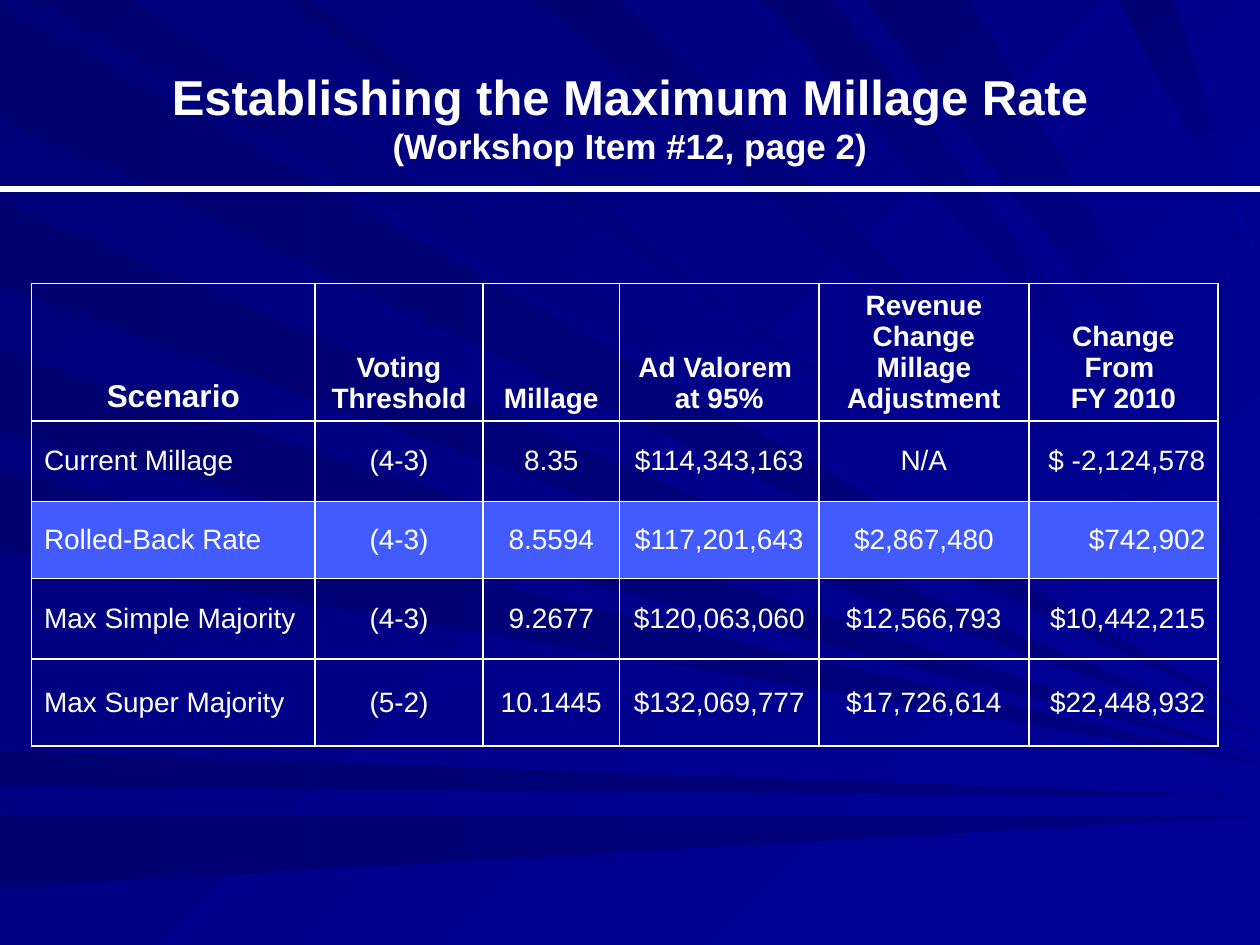
from lxml import etree
from pptx import Presentation
from pptx.dml.color import RGBColor
from pptx.enum.shapes import MSO_CONNECTOR
from pptx.enum.text import MSO_ANCHOR, PP_ALIGN
from pptx.oxml.ns import qn
from pptx.util import Pt

STRAIGHT = MSO_CONNECTOR.STRAIGHT
LEFT, CENTER, RIGHT = PP_ALIGN.LEFT, PP_ALIGN.CENTER, PP_ALIGN.RIGHT
MIDDLE, BOTTOM = MSO_ANCHOR.MIDDLE, MSO_ANCHOR.BOTTOM
FONT = "Arial"
COLORS = {"text": "FFFFFF", "rule": "FFFFFF", "highlight": "425BFF",
          "back_start": "000078", "back_end": "000099",
          "ray_start": "000070", "left_end": "000080", "top_end": "000099"}
PAGE_WIDTH, PAGE_HEIGHT = 720, 540
LEFT_RAYS = [(2, 67, 410), (115, 164, 421), (200, 246, 432),
             (269, 315, 436), (429, 449, 455), (466, 507, 466)]
TOP_RAYS = [(19, 73, 405), (162, 178, 396), (307, 354, 355),
            (436, 476, 321), (494, 554, 294), (639, 670, 151)]
TITLE_LINES = [("Establishing the Maximum Millage Rate", 28),
               ("(Workshop Item #12, page 2)", 20)]
COLUMN_WIDTHS = [162, 96, 78, 114, 120, 108]
ROW_HEIGHTS = [78.5, 46, 44, 46, 50]
ALIGNMENTS = [LEFT, CENTER, CENTER, CENTER, CENTER, RIGHT]
HIGHLIGHT_ROW = 2
ROWS = [
    ["Scenario", "Voting Threshold", "Millage", "Ad Valorem \nat 95%",
     "Revenue Change Millage Adjustment", "Change From \nFY 2010"],
    ["Current Millage", "(4-3)", "8.35", "$114,343,163", "N/A", "$ -2,124,578"],
    ["Rolled-Back Rate", "(4-3)", "8.5594", "$117,201,643", "$2,867,480", "$742,902"],
    ["Max Simple Majority", "(4-3)", "9.2677", "$120,063,060", "$12,566,793", "$10,442,215"],
    ["Max Super Majority", "(5-2)", "10.1445", "$132,069,777", "$17,726,614", "$22,448,932"],
]


def paint(fill, start, end=None, angle=0):
    """Fill with one colour, or with a gradient turned clockwise by angle."""
    if end is None:
        fill.solid()
        fill.fore_color.rgb = RGBColor.from_string(start)
        return
    fill.gradient()
    fill.gradient_angle = 360 - angle
    for stop, color in zip(fill.gradient_stops, (start, end)):
        stop.color.rgb = RGBColor.from_string(color)


def format_font(font, size, bold=False):
    """Set the common typeface and colour with the given size and weight."""
    font.name = FONT
    font.size = Pt(size)
    font.bold = bold
    font.color.rgb = RGBColor.from_string(COLORS["text"])


def write_text(frame, text, size=16, bold=False, align=LEFT):
    """Write each line of text as a formatted paragraph."""
    frame.text = text
    for para in frame.paragraphs:
        para.alignment = align
        for span in para.runs:
            format_font(span.font, size, bold)


def add_ray(group, points, end, angle):
    """Draw one tapering ray through the points."""
    builder = group.shapes.build_freeform(*points[0], scale=Pt(1))
    builder.add_line_segments(points[1:], close=True)
    ray = builder.convert_to_shape()
    paint(ray.fill, COLORS["ray_start"], end, angle)
    ray.line.fill.background()
    ray.shadow.inherit = False


def add_rays(page):
    """Draw rays from the left and top edges, grouped behind the title."""
    group = page.shapes.add_group_shape()
    for near, far, tip in LEFT_RAYS:
        add_ray(group, [(0, near), (PAGE_WIDTH, tip), (0, far)], COLORS["left_end"], 0)
    for near, far, tip in TOP_RAYS:
        add_ray(group, [(near, 0), (PAGE_WIDTH, tip), (far, 0)], COLORS["top_end"], 45)
    page.shapes.title.element.addprevious(group.element)


def set_title(page):
    """Place the title and write its two lines."""
    title = page.shapes.title
    title.left, title.top, title.width, title.height = Pt(36), Pt(21.6), Pt(648), Pt(90)
    frame = title.text_frame
    frame.word_wrap = True
    frame.vertical_anchor = MIDDLE
    para = frame.paragraphs[0]
    para.alignment = CENTER
    for index, (text, size) in enumerate(TITLE_LINES):
        if index:
            para.add_line_break()
        span = para.add_run()
        span.text = text
        format_font(span.font, size, bold=True)


def add_borders(cell):
    """Draw a thin line on the four sides of a cell."""
    properties = cell._tc.get_or_add_tcPr()
    for index, side in enumerate(("lnL", "lnR", "lnT", "lnB")):
        line = etree.Element(qn(f"a:{side}"), w=str(Pt(1)))
        solid = etree.SubElement(line, qn("a:solidFill"))
        etree.SubElement(solid, qn("a:srgbClr"), val=COLORS["rule"])
        properties.insert(index, line)


def add_millage_table(page):
    """Build the table of millage scenarios."""
    table = page.shapes.add_table(len(ROWS), len(COLUMN_WIDTHS), Pt(18), Pt(162),
                                  Pt(sum(COLUMN_WIDTHS)), Pt(sum(ROW_HEIGHTS))).table
    table.first_row = table.horz_banding = False
    for column, width in zip(table.columns, COLUMN_WIDTHS):
        column.width = Pt(width)
    for row_index, (row, height) in enumerate(zip(ROWS, ROW_HEIGHTS)):
        table.rows[row_index].height = Pt(height)
        header = row_index == 0
        for column_index, text in enumerate(row):
            cell = table.cell(row_index, column_index)
            write_text(cell.text_frame, text, bold=header,
                       size=18 if header and column_index == 0 else 16,
                       align=CENTER if header else ALIGNMENTS[column_index])
            cell.vertical_anchor = BOTTOM if header else MIDDLE
            if row_index == HIGHLIGHT_ROW:
                paint(cell.fill, COLORS["highlight"])
            else:
                cell.fill.background()
            add_borders(cell)


def add_rule(page):
    """Draw the line under the title across the page."""
    rule = page.shapes.add_connector(STRAIGHT, Pt(0), Pt(108), Pt(PAGE_WIDTH), Pt(108))
    rule.line.color.rgb = RGBColor.from_string(COLORS["rule"])
    rule.line.width = Pt(3)
    etree.SubElement(rule.element.spPr, qn("a:effectLst"))


def main():
    """Build the slide and save the deck."""
    deck = Presentation()
    deck.slide_width, deck.slide_height = Pt(PAGE_WIDTH), Pt(PAGE_HEIGHT)
    page = deck.slides.add_slide(deck.slide_layouts.get_by_name("Title Only"))
    paint(page.background.fill, COLORS["back_start"], COLORS["back_end"], 45)
    add_rays(page)
    set_title(page)
    add_millage_table(page)
    add_rule(page)
    deck.save("out.pptx")


if __name__ == "__main__":
    main()
